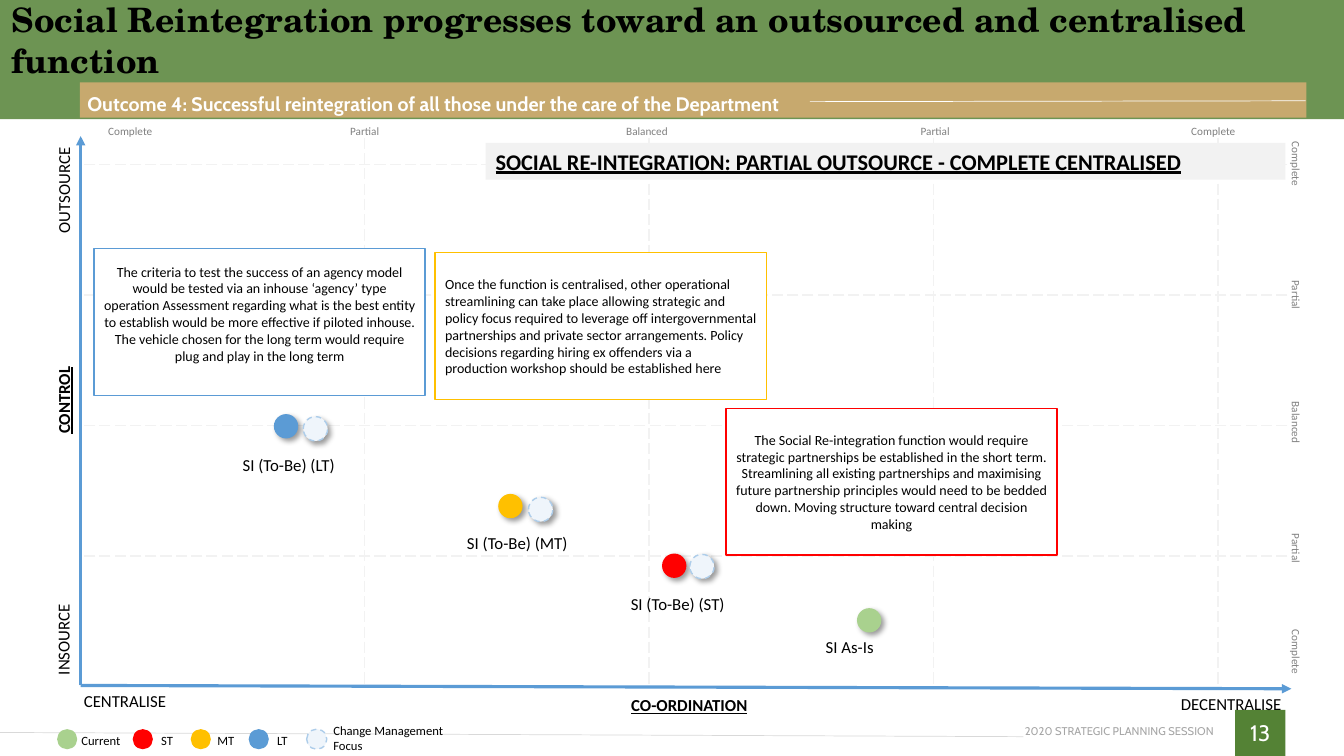
from lxml import etree
from pptx import Presentation
from pptx import util as u
from pptx.dml.color import RGBColor
from pptx.enum import dml, shapes, text
from pptx.oxml import parse_xml
from pptx.oxml.ns import nsdecls, qn

BLACK, WHITE = RGBColor(0, 0, 0), RGBColor(255, 255, 255)
GREEN, GOLD = RGBColor(0x54, 0x82, 0x35), RGBColor(0xC7, 0xA9, 0x6E)
BLUE, RED = RGBColor(0x5B, 0x9B, 0xD5), RGBColor(0xFF, 0, 0)
AMBER, LIME = RGBColor(0xFF, 0xC0, 0), RGBColor(0xA9, 0xD1, 0x8E)
PALE, PALE_EDGE = RGBColor(0xEF, 0xF5, 0xFB), RGBColor(0xAD, 0xCD, 0xEA)
GRID, RULE = RGBColor(0xF2, 0xF2, 0xF2), RGBColor(0xD9, 0xD9, 0xD9)
GREY, FOOTER = RGBColor(0x80, 0x80, 0x80), RGBColor(0xA6, 0xA6, 0xA6)
RECT, OVAL = shapes.MSO_SHAPE.RECTANGLE, shapes.MSO_SHAPE.OVAL
LEFT, CENTER, RIGHT = text.PP_ALIGN.LEFT, text.PP_ALIGN.CENTER, text.PP_ALIGN.RIGHT
TOP, MIDDLE = text.MSO_ANCHOR.TOP, text.MSO_ANCHOR.MIDDLE

prs = Presentation()
prs.slide_width, prs.slide_height = u.Inches(13.33), u.Inches(7.5)
s = prs.slides.add_slide(prs.slide_layouts[1])
CELL = prs.slide_height / 90  # the slide is 160 columns by 90 rows


def draw(kind, at, fill, line=None, dash=None, shadow=False):
    """Add a filled preset shape at (column, row, columns, rows)."""
    sp = s.shapes.add_shape(kind, *[int(v * CELL) for v in at])
    sp.shadow.inherit = False
    sp.fill.solid()
    sp.fill.fore_color.rgb = fill
    if line is None:
        sp.line.fill.background()
    else:
        sp.line.color.rgb = line
        sp.line.width = u.Pt(1)
        sp.line.dash_style = dash
    if shadow:
        effects = sp._element.spPr.find(qn("a:effectLst"))
        effects.append(parse_xml(
            f'<a:outerShdw {nsdecls("a")} blurRad="50800" dist="38100" dir="2700000">'
            '<a:srgbClr val="000000"><a:alpha val="40000"/></a:srgbClr></a:outerShdw>'))
    return sp


def write(words, sp=None, at=None, size=12, font="Calibri", color=BLACK, align=LEFT,
          anchor=MIDDLE, bold=False, underline=False, turn=0, inset=None, bottom=None, after=0):
    """Put formatted text in a shape, or in a new text box at a grid place."""
    place = [int(v * CELL) for v in at] if at else None
    if sp is None:
        sp = s.shapes.add_textbox(*place)
    elif place:
        sp.left, sp.top, sp.width, sp.height = place
    sp.rotation = turn
    tf = sp.text_frame
    tf.word_wrap, tf.auto_size, tf.vertical_anchor = True, text.MSO_AUTO_SIZE.NONE, anchor
    if inset is not None:
        tf.margin_left = tf.margin_right = tf.margin_top = tf.margin_bottom = inset
    if bottom is not None:
        tf.margin_bottom = bottom
    p = tf.paragraphs[0]
    p.alignment, p.space_before, p.space_after = align, u.Pt(0), u.Pt(after)
    r = p.add_run()
    r.text = words
    f = r.font
    f.name, f.size, f.bold, f.underline = font, u.Pt(size), bold, underline
    f.color.rgb = color
    return sp


# Header bands and page number
band = draw(RECT, (0, 0, 160, 14.2), GREEN)
band_color = band._element.spPr.find(qn("a:solidFill"))[0]
etree.SubElement(band_color, qn("a:alpha")).set("val", "85000")
draw(RECT, (9.5, 9.8, 146, 4.2), GOLD)
write("13", draw(RECT, (147, 84.5, 6, 5.5), GREEN),
      size=16, font="Cabin", color=WHITE, align=CENTER)
write("2020 STRATEGIC PLANNING SESSION", at=(121.8, 86.2, 22.7, 1.6), size=8,
      font="Cabin", color=FOOTER, align=RIGHT, inset=0)

# Rules, axes and dashed grid: ends, colour, width, style
lines = [((121.8, 87.7, 0, 87.2), RULE, 0.5, None),
         ((96.4, 12.1, 155.4, 12), WHITE, 0.5, None),
         ((9.6, 81.6, 153.7, 82), BLUE, 2.25, "arrow"),
         ((9.6, 81.6, 9.6, 16.2), BLUE, 2.25, "arrow")]
for i in range(4):
    x, y = 43.4 + 33.85 * i, 19.55 + 15.55 * i
    lines += [((x, 16.4, x, 81.6), GRID, 1, "dash"), ((153.2, y, 10, y), GRID, 1, "dash")]
for ends, color, width, style in lines:
    c = s.shapes.add_connector(shapes.MSO_CONNECTOR.STRAIGHT, *[int(v * CELL) for v in ends])
    c.line.color.rgb, c.line.width = color, u.Pt(width)
    if style == "dash":
        c.line.dash_style = dml.MSO_LINE.LONG_DASH
    elif style == "arrow":
        etree.SubElement(c.line._get_or_add_ln(), qn("a:tailEnd")).set("type", "triangle")
    etree.SubElement(c._element.spPr, qn("a:effectLst"))

# Axis names
write("OUTSOURCE", at=(0.1, 20.6, 14.9, 4.1), align=CENTER, turn=270)
write("CONTROL", at=(0.1, 45.6, 14.9, 4.1), align=CENTER, turn=270, bold=True, underline=True)
write("INSOURCE", at=(0.8, 72.8, 13.4, 4.1), turn=270)
write("CENTRALISE", at=(8.8, 81.7, 15, 3.4))
write("CO-ORDINATION", at=(71.6, 81.8, 20.9, 4.3), align=CENTER, bold=True, underline=True)
write("DECENTRALISE", at=(136, 81.8, 17.7, 4), align=RIGHT)

# Scale labels, centred on each column and row
scale = ["Complete", "Partial", "Balanced", "Partial", "Complete"]
column_centres = [15.5, 43.4, 77, 111.3, 144.4]
row_centres = [19.5, 35.1, 50.3, 65.3, 77.6]
for level, x, y in zip(scale, column_centres, row_centres):
    write(level, at=(x - 6.3, 13.4, 12.6, 4.3), size=8, color=GREY, align=CENTER)
    write(level, at=(154.3 - 5.2, y - 2.35, 10.4, 4.7), size=8, color=GREY, align=CENTER, turn=90)

# Legend: dot column, label column, label width
for label, color, edge, x, label_x, width in [
        ("Current", LIME, None, 6.8, 8.5, 8),
        ("ST", RED, None, 15.8, 18, 11),
        ("MT", AMBER, None, 22.7, 24.7, 11),
        ("LT", BLUE, None, 29.6, 31.8, 11),
        ("Change Management Focus", PALE, PALE_EDGE, 36.5, 38.5, 15.8)]:
    draw(OVAL, (x, 86.8, 2.4, 2.4), color, edge, dml.MSO_LINE.DASH if edge else None)
    write(label, at=(label_x, 86.3 if edge else 86.6, width, 3), size=9)

# Stages: dot place, label drop, change-focus dot place
DOT = 2.9
for label, color, x, y, drop, focus in [
        ("SI As-Is", LIME, 102, 72.4, 2.5, None),
        ("SI (To-Be) (LT)", BLUE, 32.6, 49.3, 3.9, (36.1, 49.6)),
        ("SI (To-Be) (ST)", RED, 78.8, 65.9, 3.8, (82.1, 66)),
        ("SI (To-Be) (MT)", AMBER, 59.3, 58.8, 3.7, (62.9, 59.2))]:
    draw(OVAL, (x, y, DOT, DOT), color, shadow=True)
    write(label, at=(x - 4.9, y + drop, 15.1, 4.3))
    if focus:
        draw(OVAL, (*focus, DOT, DOT), PALE, PALE_EDGE, dml.MSO_LINE.DASH, shadow=True)

# Stage notes
for words, color, x, y, align, bottom in [
        ("The criteria to test the success of an agency model would be tested via an inhouse "
         "‘agency’ type operation Assessment regarding what is the best entity to establish "
         "would be more effective if piloted inhouse. The vehicle chosen for the long term "
         "would require plug and play in the long term", BLUE, 11.2, 29.6, CENTER, u.Inches(0.22)),
        ("The Social Re-integration function would require strategic partnerships be established "
         "in the short term. Streamlining all existing partnerships and maximising future "
         "partnership principles would need to be bedded down. Moving structure toward central "
         "decision making", RED, 86.4, 48.6, CENTER, None),
        ("Once the function is centralised, other operational streamlining can take place "
         "allowing strategic and policy focus required to leverage off intergovernmental "
         "partnerships and private sector arrangements. Policy decisions regarding hiring ex "
         "offenders via a production workshop should be established here",
         AMBER, 51.8, 30.1, LEFT, None)]:
    write(words, draw(RECT, (x, y, 39.4, 17.5), WHITE, color), size=10, align=align, bottom=bottom)

# Chart heading
write("SOCIAL RE-INTEGRATION: PARTIAL OUTSOURCE - COMPLETE CENTRALISED",
      draw(RECT, (57.8, 17, 95.2, 4.4), GRID), size=16, anchor=TOP, bold=True, underline=True)

# Title and outcome, brought in front of the bands
title, outcome = s.shapes.title, s.placeholders[1]
write("Social Reintegration progresses toward an outsourced and centralised function", title,
      at=(0.2, -0.7, 160, 10.9), size=24, font="TeX Gyre Schola", anchor=TOP, bold=True)
write("Outcome 4: Successful reintegration of all those under the care of the Department", outcome,
      at=(10.4, 10.9, 90.1, 2.9), size=14, font="Cabin", color=WHITE, bold=True, inset=0, after=3)
pPr = outcome.text_frame.paragraphs[0]._p.get_or_add_pPr()
pPr.set("marL", "0")
pPr.set("indent", "0")
etree.SubElement(pPr, qn("a:buNone"))
for sp in (title, outcome):
    s.shapes._spTree.append(sp._element)

prs.save("out.pptx")
